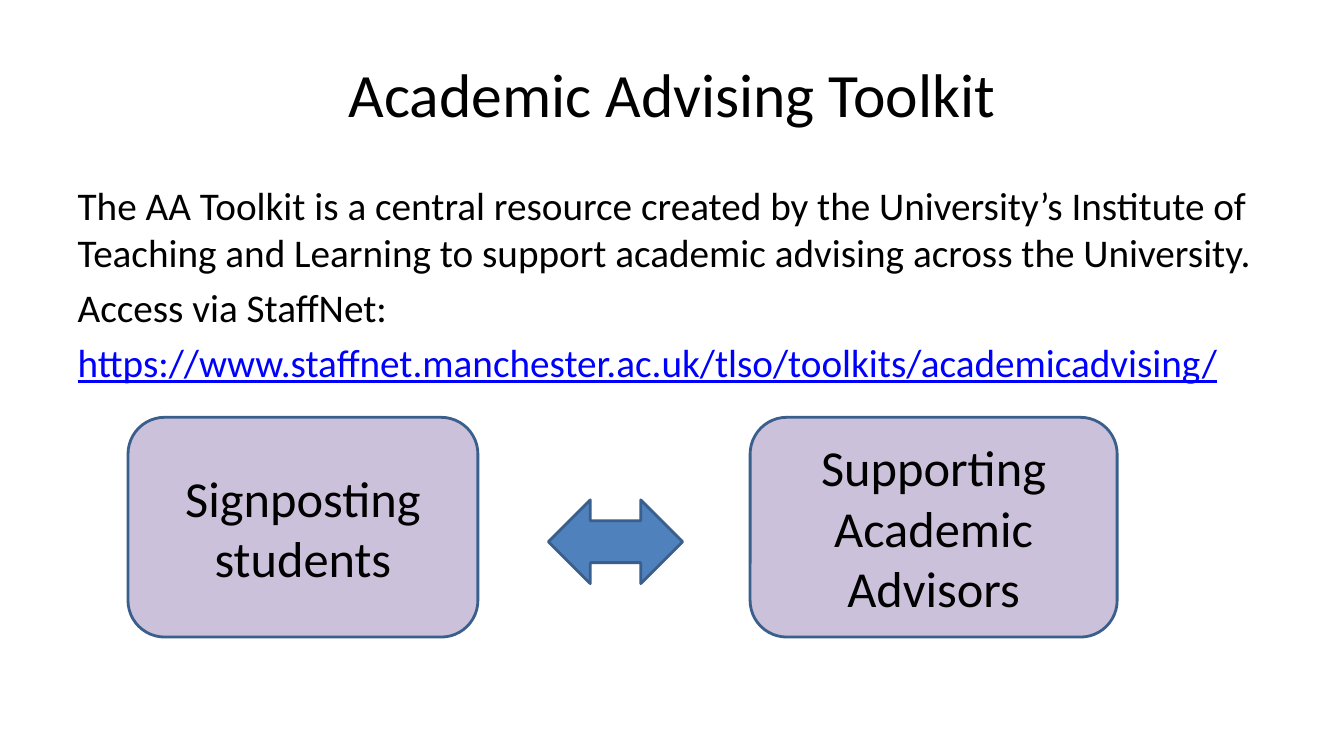
import pptx
import pptx.dml.color
import pptx.enum.shapes
import pptx.enum.text
import pptx.util
from lxml import etree
from pptx.util import Inches, Pt

SHAPES = pptx.enum.shapes.MSO_SHAPE
ALIGN = pptx.enum.text.PP_ALIGN
ANCHOR = pptx.enum.text.MSO_ANCHOR

BLACK, LINK_BLUE = "000000", "0000FF"
LILAC, ARROW_BLUE, OUTLINE = "CCC1DA", "4F81BD", "3A5F8C"

TITLE = "Academic Advising Toolkit"
BODY = [
    ("The AA Toolkit is a central resource created by the University’s Institute of "
     "Teaching and Learning to support academic advising across the University.",
     {"color": BLACK}),
    ("Access via StaffNet:", {"color": BLACK}),
    ("https://www.staffnet.manchester.ac.uk/tlso/toolkits/academicadvising/",
     {"color": LINK_BLUE, "underline": True}),
]

MARGIN, CONTENT_WIDTH = 0.67, 12
CARD_TOP, CARD_HEIGHT = 4.14, 2.18
CARDS = [("Signposting students", 1.27, 3.47), ("Supporting Academic Advisors", 7.44, 3.64)]
ARROW = (5.44, 4.96, 1.33, 0.83)


def rgb(value):
    return pptx.dml.color.RGBColor.from_string(value)


def write(para, text, size, color=BLACK, **formats):
    span = para.add_run()
    span.text = text
    span.font.color.rgb = rgb(color)
    for name, value in {"name": "Calibri", "size": Pt(size), **formats}.items():
        setattr(span.font, name, value)


def place(shape, *lengths):
    for name, value in zip(("left", "top", "width", "height"), lengths):
        setattr(shape, name, Inches(value))


def remove_bullet(para):
    properties = para._p.get_or_add_pPr()
    properties.set("marL", "0")
    properties.set("indent", "0")
    etree.SubElement(properties, pptx.oxml.ns.qn("a:buNone"))


def add_block(page, kind, lengths, fill):
    shape = page.shapes.add_shape(kind, *map(Inches, lengths))
    shape.shadow.inherit = False
    shape.fill.solid()
    shape.fill.fore_color.rgb = rgb(fill)
    shape.line.color.rgb = rgb(OUTLINE)
    shape.line.width = Pt(2)
    return shape


def main():
    deck = pptx.Presentation()
    deck.slide_width, deck.slide_height = Inches(13.33), Inches(7.5)
    page = deck.slides.add_slide(deck.slide_layouts[1])

    title, body = page.placeholders
    place(title, MARGIN, 0.3, CONTENT_WIDTH, 1.25)
    title.text_frame.vertical_anchor = ANCHOR.MIDDLE
    heading = title.text_frame.paragraphs[0]
    heading.alignment = ALIGN.CENTER
    write(heading, TITLE, 44)

    place(body, MARGIN, 1.75, CONTENT_WIDTH, 4.95)
    frame = body.text_frame
    frame.auto_size = pptx.enum.text.MSO_AUTO_SIZE.NONE
    for index, (text, formats) in enumerate(BODY):
        para = frame.add_paragraph() if index else frame.paragraphs[0]
        remove_bullet(para)
        para.space_before = Pt(5.6 if index else 0)
        write(para, text, 28, **formats)

    add_block(page, SHAPES.LEFT_RIGHT_ARROW, ARROW, ARROW_BLUE)
    for text, left, width in CARDS:
        card = add_block(page, SHAPES.ROUNDED_RECTANGLE,
                         (left, CARD_TOP, width, CARD_HEIGHT), LILAC)
        card.text_frame.word_wrap = True
        card.text_frame.vertical_anchor = ANCHOR.MIDDLE
        para = card.text_frame.paragraphs[0]
        para.alignment = ALIGN.CENTER
        write(para, text, 36)

    deck.save("out.pptx")


if __name__ == "__main__":
    main()
